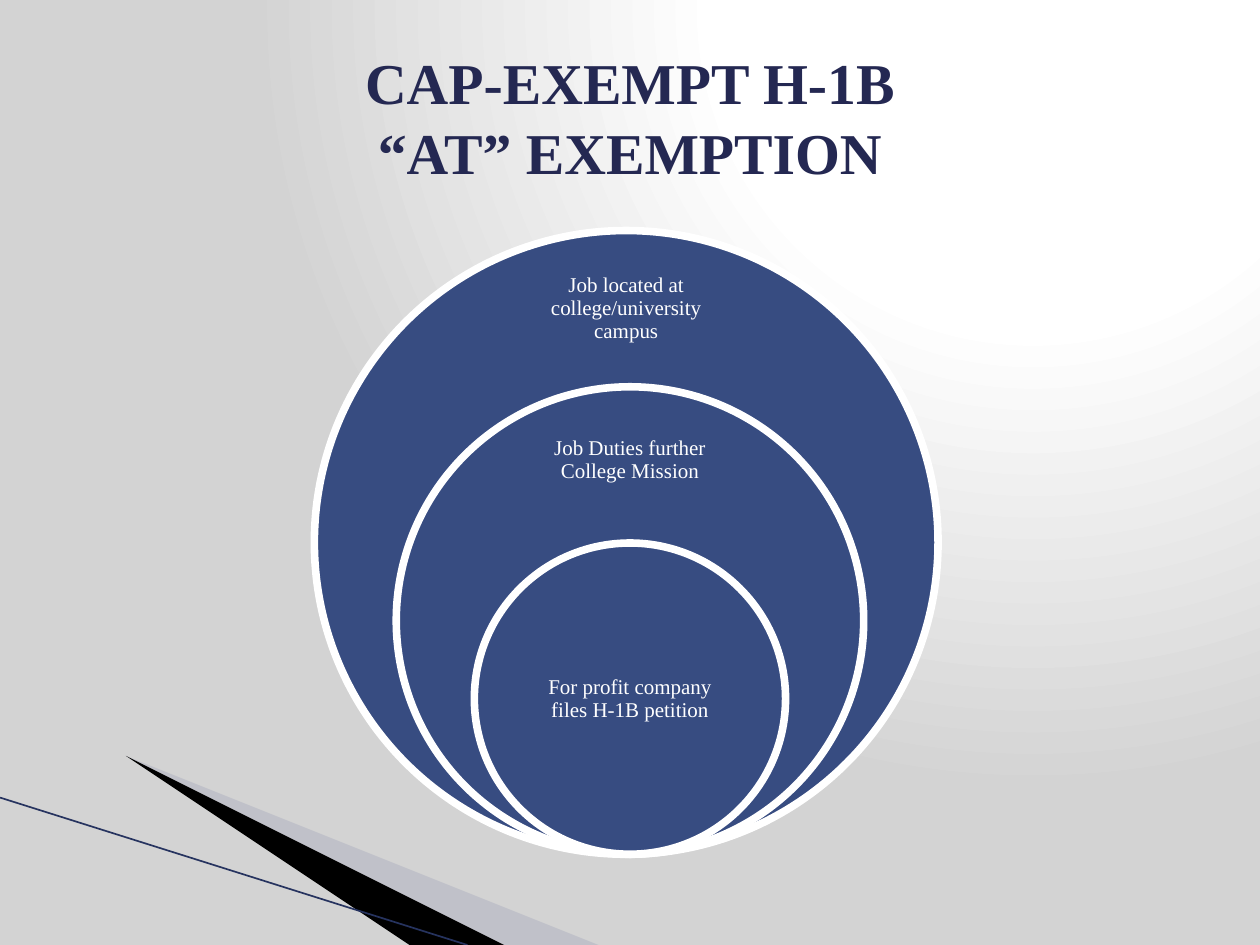
"""Build the cap-exempt H-1B slide with nested circles of requirements."""
from lxml import etree
from pptx import Presentation
from pptx.dml.color import RGBColor
from pptx.enum import shapes, text
from pptx.oxml import ns
from pptx.util import Inches, Pt

FONT = "Times New Roman"
COLORS = {"title": "242852", "circle": "374C81", "white": "FFFFFF", "shade": "D3D3D3",
          "wedge": "A4A8BC", "black": "000000", "edge": "26335F"}
TITLE = "CAP-EXEMPT H-1B\v“AT” EXEMPTION"
CIRCLES = [
    ("Job located at college/university campus", 4.95, 4.97, (2.08, 0.74)),
    ("Job Duties further College Mission", 3.71, 5.0, (3.3, 0.7)),
    ("For profit company files H-1B petition", 2.47, 5.0, (4.93, 1.24)),
]
CIRCLE_BOTTOM, LABEL_WIDTH, LABEL_INSET = 6.78, 1.74, 0.09
WEDGES = [
    ("wedge", 40, [(0.55, 6.5), (5.95, 7.5), (4.56, 7.5)]),
    ("black", 100, [(0.53, 6.49), (4.57, 7.5), (3.72, 7.5)]),
]
EDGE = (0, 6.33, 3.71, 7.5)
GRADIENT = [(0, "white"), (40, "white"), (100, "shade")]


def rgb(name):
    return RGBColor.from_string(COLORS[name])


def sub(parent, tag, **attributes):
    return etree.SubElement(parent, ns.qn(tag), {k: str(v) for k, v in attributes.items()})


def paint_background(slide):
    slide.background.fill.gradient()
    gradient = slide.element.find(".//" + ns.qn("a:gradFill"))
    for child in list(gradient):
        gradient.remove(child)
    stops = sub(gradient, "a:gsLst")
    for position, color in GRADIENT:
        sub(sub(stops, "a:gs", pos=position * 1000), "a:srgbClr", val=COLORS[color])
    sub(sub(gradient, "a:path", path="circle"), "a:fillToRect", l=65000, t=0, r=0, b=98000)


def add_wedge(slide, color, opacity, points):
    builder = slide.shapes.build_freeform(*points[0], scale=Inches(1))
    builder.add_line_segments(points[1:], close=True)
    wedge = builder.convert_to_shape()
    wedge.shadow.inherit = False
    wedge.fill.solid()
    wedge.fill.fore_color.rgb = rgb(color)
    wedge.line.fill.background()
    if opacity < 100:
        sub(wedge.fill._xPr.find(".//" + ns.qn("a:srgbClr")), "a:alpha", val=opacity * 1000)


def add_edge(slide):
    edge = slide.shapes.add_connector(shapes.MSO_CONNECTOR.STRAIGHT, *map(Inches, EDGE))
    edge.line.color.rgb = rgb("edge")
    edge.line.width = Pt(0.95)
    sub(edge._element.spPr, "a:effectLst")


def style_text(paragraph, size, color, bold=False):
    paragraph.alignment = text.PP_ALIGN.CENTER
    for run in paragraph.runs:
        run.font.name, run.font.size, run.font.bold = FONT, Pt(size), bold
        run.font.color.rgb = rgb(color)


def add_title(slide):
    title = slide.shapes.title
    title.left, title.top, title.width, title.height = map(Inches, (0.5, 0.3, 9, 1.25))
    title.text_frame.text = TITLE
    title.text_frame.vertical_anchor = text.MSO_ANCHOR.MIDDLE
    style_text(title.text_frame.paragraphs[0], 33, "title", True)


def add_circle(slide, wording, diameter, center, label_span):
    circle = slide.shapes.add_shape(
        shapes.MSO_SHAPE.OVAL, Inches(center - diameter / 2),
        Inches(CIRCLE_BOTTOM - diameter), Inches(diameter), Inches(diameter))
    circle.shadow.inherit = False
    circle.fill.solid()
    circle.fill.fore_color.rgb = rgb("circle")
    circle.line.color.rgb = rgb("white")
    circle.line.width = Pt(4.33)

    top, height = label_span
    label = slide.shapes.add_textbox(Inches(center - LABEL_WIDTH / 2), Inches(top),
                                     Inches(LABEL_WIDTH), Inches(height))
    frame = label.text_frame
    frame.word_wrap = True
    frame.vertical_anchor = text.MSO_ANCHOR.MIDDLE
    frame.margin_left = frame.margin_right = Inches(LABEL_INSET)
    frame.margin_top = frame.margin_bottom = Inches(LABEL_INSET)
    frame.text = wording
    frame.paragraphs[0].line_spacing = 0.9
    style_text(frame.paragraphs[0], 12, "white")


def main():
    deck = Presentation()
    deck.slide_width, deck.slide_height = Inches(10), Inches(7.5)
    slide = deck.slides.add_slide(deck.slide_layouts[5])
    paint_background(slide)
    for wedge in WEDGES:
        add_wedge(slide, *wedge)
    add_edge(slide)
    add_title(slide)
    for circle in CIRCLES:
        add_circle(slide, *circle)
    deck.save("out.pptx")


if __name__ == "__main__":
    main()
